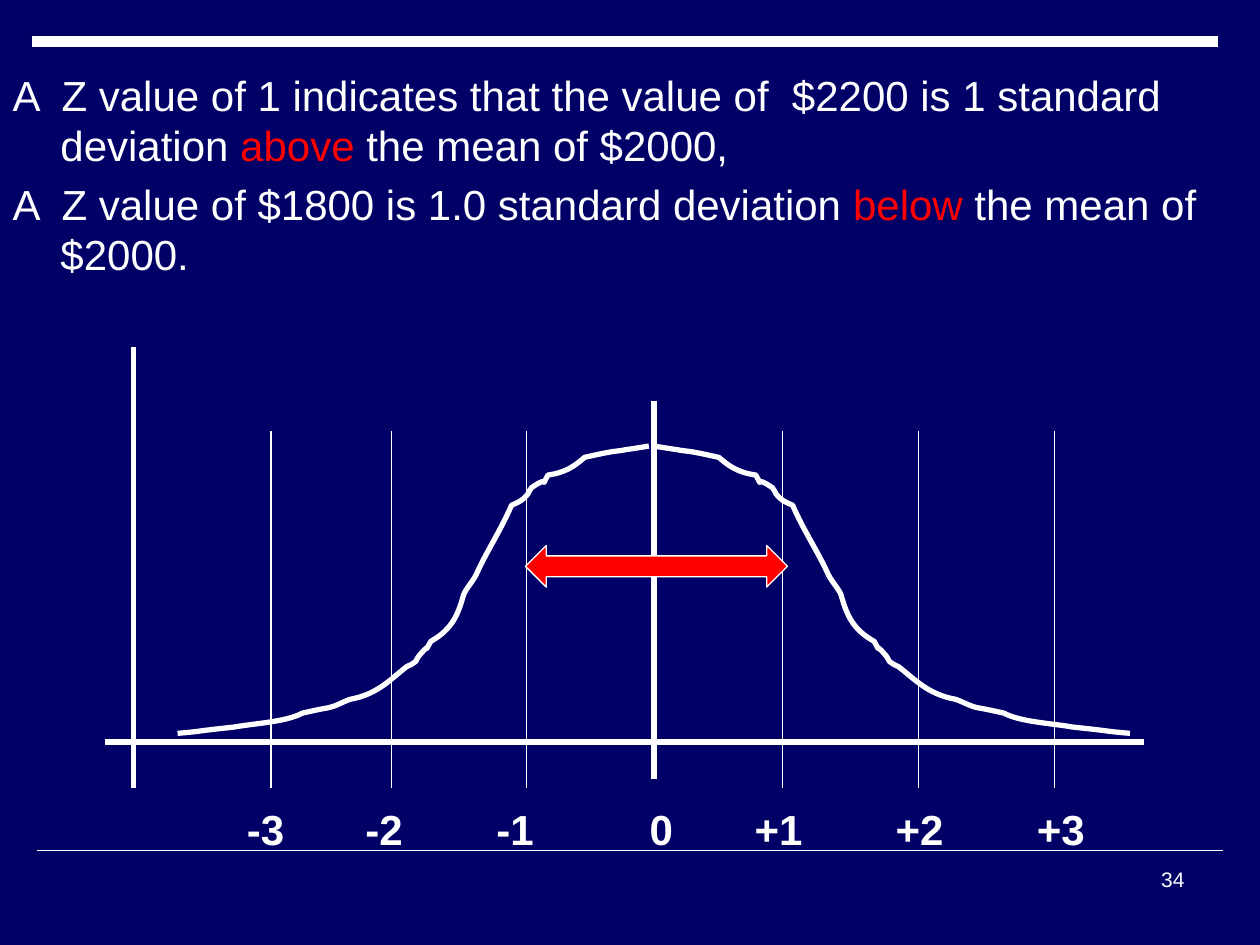
from dataclasses import dataclass

from lxml import etree
from pptx import Presentation
from pptx.dml.color import RGBColor
from pptx.enum import shapes, text
from pptx.oxml import ns
from pptx.util import Inches, Pt


@dataclass(frozen=True)
class Theme:
    background: RGBColor = RGBColor(0x00, 0x00, 0x66)
    ink: RGBColor = RGBColor(0xFF, 0xFF, 0xFF)
    accent: RGBColor = RGBColor(0xFF, 0x00, 0x00)
    font: str = "Arial"
    body_size: int = 24
    number_size: int = 12
    band: float = 6
    heavy: float = 3
    rule: float = 1
    thin: float = 0.75


THEME = Theme()

STATEMENTS = [
    [("A  Z value of 1 indicates that the value of  $2200 is 1 standard deviation ", THEME.ink),
     ("above", THEME.accent), (" the mean of $2000,", THEME.ink)],
    [("A  Z value of $1800 is 1.0 standard deviation ", THEME.ink),
     ("below", THEME.accent), (" the mean of $2000.", THEME.ink)],
]

# Z label: centre of the label
Z_LABELS = {"-3": 2.11, "-2": 3.05, "-1": 4.09, "0": 5.25, "+1": 6.18, "+2": 7.3, "+3": 8.42}
DEVIATION_LINES = [4.18, 3.11, 2.15, 7.29, 6.21, 8.37]

# Bezier points of half the bell: distance from the mean, height on the slide
HALF_BELL = [
    (0, 3.54), (0.06, 3.55), (0.12, 3.56), (0.19, 3.57), (0.23, 3.58), (0.28, 3.58), (0.32, 3.59),
    (0.38, 3.6), (0.51, 3.63), (0.51, 3.63), (0.59, 3.7), (0.66, 3.75), (0.8, 3.77),
    (0.88, 3.91), (0.76, 3.75), (0.93, 3.87), (0.95, 3.88), (0.94, 3.9), (0.96, 3.92),
    (1, 3.97), (1.02, 3.98), (1.09, 4.01), (1.17, 4.2), (1.29, 4.38), (1.37, 4.56),
    (1.4, 4.62), (1.45, 4.67), (1.47, 4.72), (1.51, 4.86), (1.55, 4.99), (1.73, 5.09),
    (1.81, 5.23), (1.7, 5.06), (1.82, 5.2), (1.84, 5.22), (1.84, 5.24), (1.85, 5.25),
    (1.87, 5.27), (1.9, 5.28), (1.92, 5.29), (2.05, 5.39), (2.15, 5.51), (2.37, 5.55),
    (2.43, 5.57), (2.49, 5.61), (2.56, 5.62), (2.62, 5.63), (2.75, 5.66), (2.75, 5.66),
    (2.88, 5.73), (3.12, 5.74), (3.29, 5.77), (3.38, 5.78), (3.47, 5.79), (3.55, 5.8),
    (3.61, 5.81), (3.74, 5.82), (3.74, 5.82),
]


def write(paragraph, words, size=THEME.body_size, color=THEME.ink, bold=False):
    run = paragraph.add_run()
    run.text = words
    run.font.name = THEME.font
    run.font.size = Pt(size)
    run.font.bold = bold
    run.font.color.rgb = color


def add_text_box(slide, left, top, width, height):
    frame = slide.shapes.add_textbox(
        Inches(left), Inches(top), Inches(width), Inches(height)).text_frame
    frame.word_wrap = True
    return frame.paragraphs[0]


def set_outline(shape, weight):
    shape.line.color.rgb = THEME.ink
    shape.line.width = Pt(weight)


def add_line(slide, x1, y1, x2, y2, weight):
    line = slide.shapes.add_connector(
        shapes.MSO_CONNECTOR.STRAIGHT, Inches(x1), Inches(y1), Inches(x2), Inches(y2))
    set_outline(line, weight)
    etree.SubElement(line._element.spPr, ns.qn("a:effectLst"))


def bend_segments(freeform):
    """Turn each three straight segments into one cubic Bezier segment."""
    segments = list(freeform._element.iter(ns.qn("a:lnTo")))
    for first in range(0, len(segments), 3):
        bend = etree.Element(ns.qn("a:cubicBezTo"))
        segments[first].addprevious(bend)
        for segment in segments[first:first + 3]:
            bend.append(segment[0])
            segment.getparent().remove(segment)


def add_half_bell(slide, mean, stretch):
    """Draw half the bell; a negative stretch runs to the left of the mean."""
    outline = [(Inches(mean + stretch * x), Inches(y)) for x, y in HALF_BELL]
    builder = slide.shapes.build_freeform(*outline[0])
    builder.add_line_segments(outline[1:], close=False)
    curve = builder.convert_to_shape()
    bend_segments(curve)
    curve.fill.background()
    curve.shadow.inherit = False
    set_outline(curve, THEME.heavy)


def add_statements(slide):
    body = slide.placeholders[1]
    body.left, body.top = Inches(0), Inches(0.5)
    body.width, body.height = Inches(9.67), Inches(1.92)
    frame = body.text_frame
    frame.auto_size = text.MSO_AUTO_SIZE.NONE
    frame.vertical_anchor = text.MSO_ANCHOR.TOP
    for index, statement in enumerate(STATEMENTS):
        paragraph = frame.add_paragraph() if index else frame.paragraphs[0]
        properties = paragraph._p.get_or_add_pPr()
        properties.set("marL", str(Inches(0.38)))
        properties.set("indent", str(-Inches(0.38)))
        etree.SubElement(properties, ns.qn("a:buNone"))
        for words, color in statement:
            write(paragraph, words, color=color)


def add_z_labels(slide, left=1.58, inset=0.1):
    paragraph = add_text_box(slide, left, 6.33, 7.25, 0.5)
    stops = etree.SubElement(paragraph._p.get_or_add_pPr(), ns.qn("a:tabLst"))
    for center in Z_LABELS.values():
        etree.SubElement(stops, ns.qn("a:tab"),
                         pos=str(Inches(center - left - inset)), algn="ctr")
    write(paragraph, "".join("\t" + label for label in Z_LABELS), bold=True)


def add_range_arrow(slide):
    arrow = slide.shapes.add_shape(
        shapes.MSO_SHAPE.LEFT_RIGHT_ARROW, Inches(4.17), Inches(4.33), Inches(2.08), Inches(0.33))
    arrow.fill.solid()
    arrow.fill.fore_color.rgb = THEME.accent
    arrow.shadow.inherit = False
    set_outline(arrow, THEME.thin)


def main():
    deck = Presentation()
    deck.slide_width, deck.slide_height = Inches(10), Inches(7.5)
    slide = deck.slides.add_slide(deck.slide_layouts[1])
    slide.background.fill.solid()
    slide.background.fill.fore_color.rgb = THEME.background
    title = slide.shapes.title._element
    title.getparent().remove(title)

    add_line(slide, 0.29, 6.75, 9.71, 6.75, THEME.rule)
    add_line(slide, 0.25, 0.33, 9.67, 0.33, THEME.band)
    page_number = add_text_box(slide, 7.17, 6.83, 2.33, 0.5)
    page_number.alignment = text.PP_ALIGN.RIGHT
    write(page_number, "34", size=THEME.number_size)
    add_statements(slide)

    add_line(slide, 0.83, 5.89, 9.08, 5.89, THEME.heavy)
    add_half_bell(slide, 5.15, -1)
    add_half_bell(slide, 5.19, 1.01)
    add_line(slide, 5.19, 3.18, 5.19, 6.18, THEME.heavy)
    add_line(slide, 1.06, 2.75, 1.06, 6.25, THEME.heavy)
    for x in DEVIATION_LINES:
        add_line(slide, x, 3.42, x, 6.25, THEME.thin)
    add_z_labels(slide)
    add_range_arrow(slide)
    deck.save("out.pptx")


if __name__ == "__main__":
    main()
